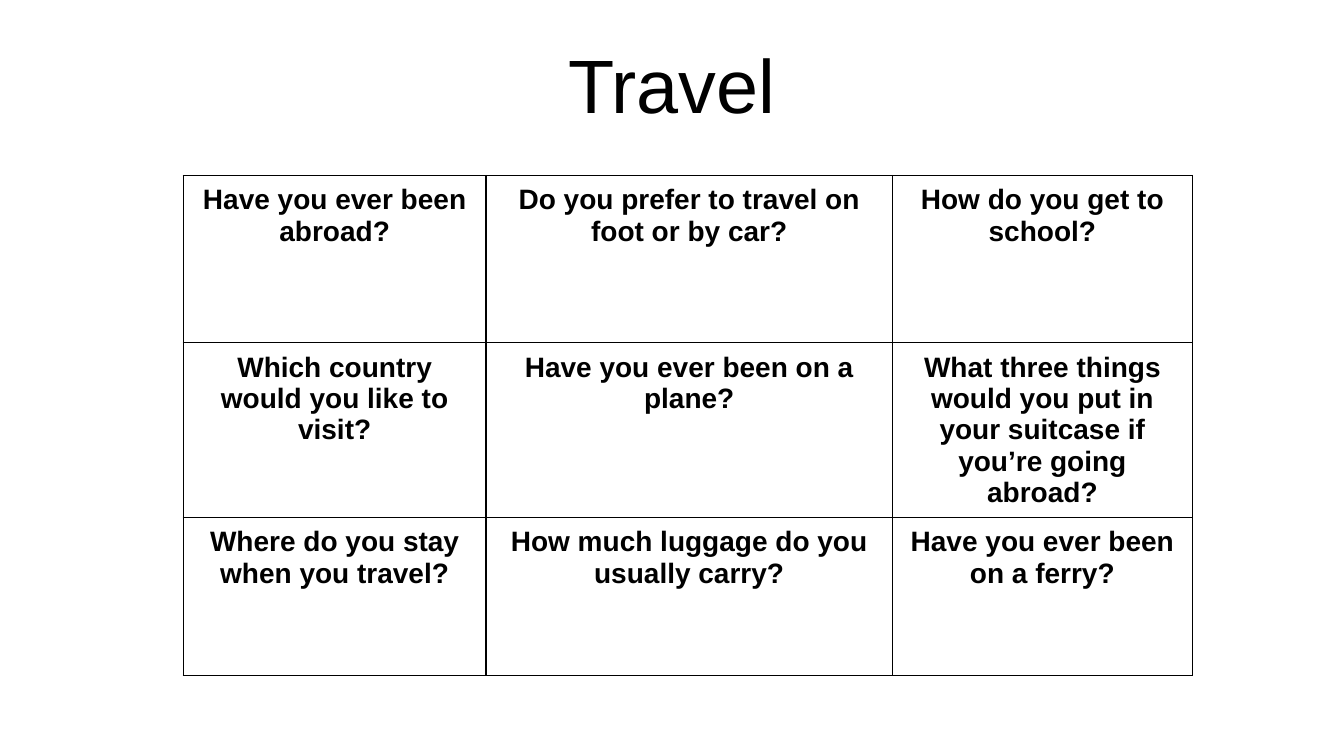
from lxml import etree
from pptx import Presentation
from pptx.dml.color import RGBColor
from pptx.enum.text import MSO_ANCHOR, MSO_AUTO_SIZE, PP_ALIGN
from pptx.oxml.ns import qn
from pptx.util import Cm, Pt

CENTER = PP_ALIGN.CENTER
BOTTOM = MSO_ANCHOR.BOTTOM
TOP = MSO_ANCHOR.TOP
NO_AUTOFIT = MSO_AUTO_SIZE.NONE
TITLE_ONLY = 5

QUESTIONS = [
    ["Have you ever been abroad?",
     "Do you prefer to travel on foot or by car?",
     "How do you get to school?"],
    ["Which country would you like to visit?",
     "Have you ever been on a plane?",
     "What three things would you put in your suitcase if you’re going abroad?"],
    ["Where do you stay when you travel?",
     "How much luggage do you usually carry?",
     "Have you ever been on a ferry?"],
]
COLUMN_WIDTHS = [7.63, 10.24, 7.56]
ROW_HEIGHTS = [4.22, 4.22, 3.99]


def rgb(hex_color):
    return RGBColor.from_string(hex_color)


class TravelSlide:
    """Holds the style and the slide being built."""

    font = "Arial"
    ink = "000000"
    paper = "FFFFFF"

    def __init__(self, prs):
        self.slide = prs.slides.add_slide(prs.slide_layouts[TITLE_ONLY])

    def centered_text(self, frame, text, size, bold=False):
        frame.text = text
        frame.word_wrap = True
        paragraph = frame.paragraphs[0]
        paragraph.alignment = CENTER
        font = paragraph.runs[0].font
        font.name, font.size, font.bold = self.font, Pt(size), bold
        font.color.rgb = rgb(self.ink)
        return paragraph

    def title(self, text, left, top, width, height):
        heading = self.slide.shapes.title
        heading.left, heading.top = Cm(left), Cm(top)
        heading.width, heading.height = Cm(width), Cm(height)
        frame = heading.text_frame
        frame.auto_size = NO_AUTOFIT
        frame.vertical_anchor = BOTTOM
        self.centered_text(frame, text, 54).line_spacing = 0.9

    def border(self, cell):
        properties = cell._tc.get_or_add_tcPr()
        for side in ("a:lnL", "a:lnR", "a:lnT", "a:lnB"):
            line = etree.SubElement(properties, qn(side), w=str(Pt(1)))
            fill = etree.SubElement(line, qn("a:solidFill"))
            etree.SubElement(fill, qn("a:srgbClr"), val=self.ink)

    def question_cell(self, cell, question):
        self.border(cell)
        cell.fill.solid()
        cell.fill.fore_color.rgb = rgb(self.paper)
        cell.margin_left = cell.margin_right = Cm(0.46)
        cell.margin_top = cell.margin_bottom = Cm(0.23)
        cell.vertical_anchor = TOP
        self.centered_text(cell.text_frame, question, 20, bold=True)

    def question_grid(self, questions, left, top, widths, heights):
        grid = self.slide.shapes.add_table(
            len(heights), len(widths), Cm(left), Cm(top),
            Cm(sum(widths)), Cm(sum(heights))).table
        grid.first_row = grid.horz_banding = False
        for column, width in zip(grid.columns, widths):
            column.width = Cm(width)
        for row, height, row_questions in zip(grid.rows, heights, questions):
            row.height = Cm(height)
            for cell, question in zip(row.cells, row_questions):
                self.question_cell(cell, question)


def main():
    prs = Presentation()
    prs.slide_width, prs.slide_height = Cm(33.87), Cm(19.05)
    travel = TravelSlide(prs)
    travel.title("Travel", 2.33, 0.81, 29.21, 2.59)
    travel.question_grid(QUESTIONS, 4.62, 4.42, COLUMN_WIDTHS, ROW_HEIGHTS)
    prs.save("out.pptx")


if __name__ == "__main__":
    main()
